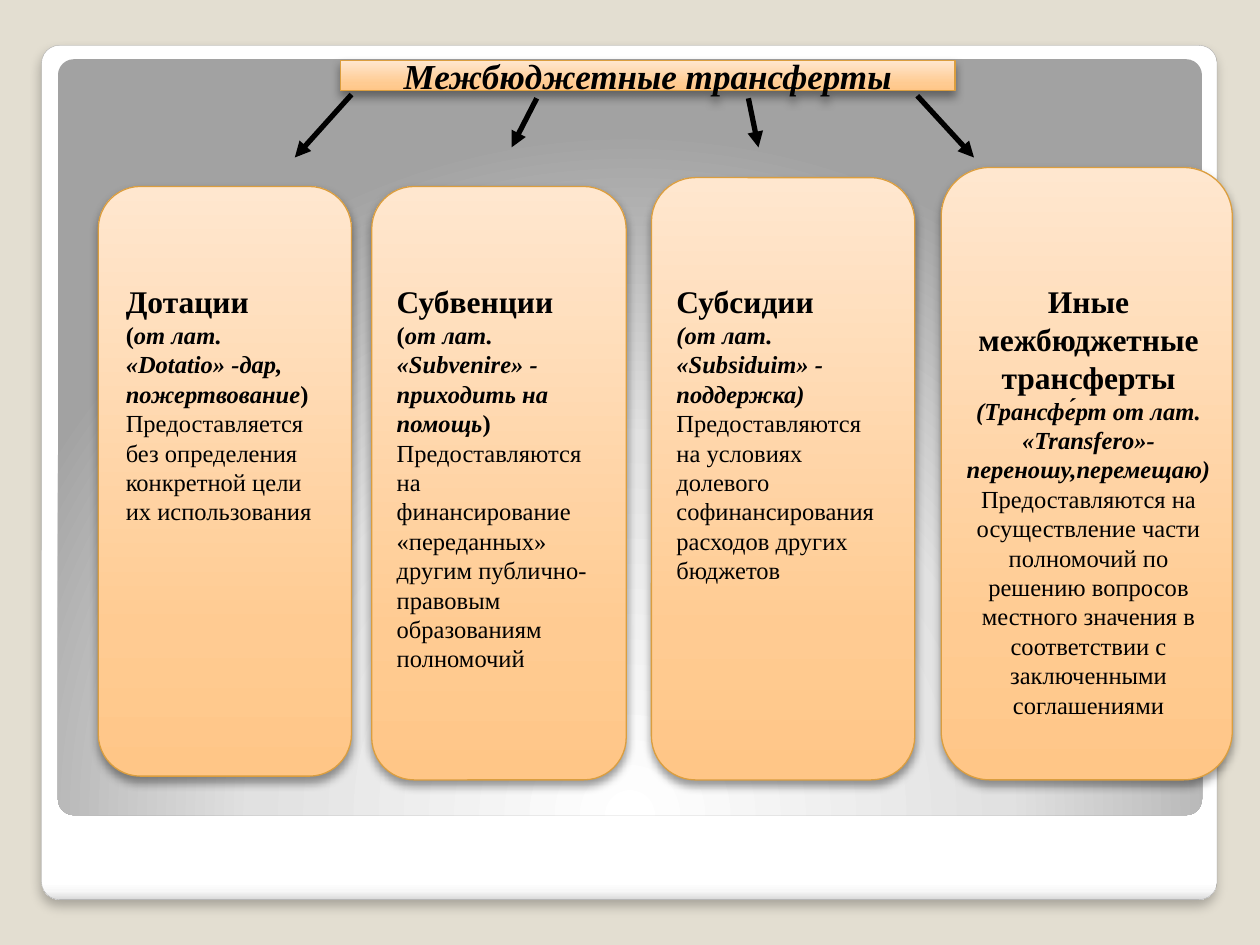
from pptx import Presentation
from pptx.dml.color import RGBColor
from pptx.enum.shapes import MSO_CONNECTOR, MSO_SHAPE
from pptx.enum.text import MSO_ANCHOR, MSO_AUTO_SIZE, PP_ALIGN
from pptx.oxml import parse_xml
from pptx.oxml.ns import nsdecls
from pptx.util import Inches, Pt
from lxml.etree import SubElement

BLACK = RGBColor(0x00, 0x00, 0x00)
BEIGE = RGBColor(0xE3, 0xDE, 0xD1)
GOLD = RGBColor(0xDB, 0x9E, 0x3F)
GREY = RGBColor(0xA4, 0xA4, 0xA4)
PALE = RGBColor(0xE1, 0xE1, 0xE1)
DARK = RGBColor(0xA2, 0xA2, 0xA2)
WHITE = RGBColor(0xFF, 0xFF, 0xFF)
MIST = RGBColor(0xF7, 0xF7, 0xF7)
SILVER = RGBColor(0xDA, 0xDA, 0xDA)
PEACH = RGBColor(0xFF, 0xC6, 0x87)
APRICOT = RGBColor(0xFF, 0xCB, 0x92)
CREAM = RGBColor(0xFF, 0xE7, 0xCF)

FRAME = [(0, WHITE), (98, WHITE), (99, MIST), (100, SILVER)]
PANEL = [(0, WHITE), (55, PALE), (100, DARK)]
ORANGE = [(0, PEACH), (25, APRICOT), (100, CREAM)]

FONT = "Times New Roman"
HEAD = (18, True, False)
BOLD = (14, True, False)
LATIN = (14, True, True)
BODY = (14, False, False)

# Card box, text box, alignment, paragraphs made of (text, style) runs
CARDS = [
    ((0.78, 1.48, 2.01, 4.68), (0.9, 2.19, 1.73, 2.05), PP_ALIGN.LEFT, [
        [("Дотации", HEAD)],
        [("(", BOLD), ("от лат. «Dotatio» -дар, пожертвование", LATIN), (")", BOLD)],
        [("Предоставляется без определения конкретной цели их использования", BODY)],
    ]),
    ((2.95, 1.48, 2.02, 4.71), (3.05, 2.19, 1.81, 3.23), PP_ALIGN.LEFT, [
        [("Субвенции", HEAD)],
        [("(", BOLD), ("от лат. «Subvenire» - приходить на помощь", LATIN), (")", BOLD)],
        [("Предоставляются на финансирование «переданных» другим "
          "публично-правовым образованиям полномочий", BODY)],
    ]),
    ((5.17, 1.41, 2.09, 4.78), (5.27, 2.19, 1.89, 2.52), PP_ALIGN.LEFT, [
        [("Субсидии", HEAD)],
        [("(от лат. «Subsiduim» - поддержка)", LATIN)],
        [("Предоставляются на условиях долевого софинансирования "
          "расходов других бюджетов", BODY)],
    ]),
    ((7.47, 1.33, 2.31, 4.86), (7.56, 2.19, 2.16, 3.6), PP_ALIGN.CENTER, [
        [("Иные межбюджетные трансферты ", HEAD),
         ("(Трансфе́рт от лат. «Transfero»-переношу,перемещаю) ", LATIN),
         ("Предоставляются на осуществление части полномочий по решению "
          "вопросов местного значения в соответствии с заключенными "
          "соглашениями", BODY)],
    ]),
]
ARROWS = [
    (2.79, 0.75, 2.34, 1.25),
    (4.26, 0.78, 4.06, 1.17),
    (5.94, 0.78, 6.02, 1.17),
    (7.28, 0.76, 7.73, 1.25),
]


def shade(shape, stops, way):
    """Fill with a gradient; way is the XML giving its direction."""
    marks = "".join(
        f'<a:gs pos="{pos * 1000}"><a:srgbClr val="{color}"/></a:gs>'
        for pos, color in stops)
    shape.fill.gradient()
    props = shape.element.spPr
    props.replace(props.find("{*}gradFill"), parse_xml(
        f'<a:gradFill {nsdecls("a")} rotWithShape="1">'
        f"<a:gsLst>{marks}</a:gsLst>{way}</a:gradFill>"))


def linear(angle):
    return f'<a:lin ang="{angle * 60000}" scaled="0"/>'


def drop(shape, alpha, blur, dist):
    """Cast a black shadow straight down."""
    shape.element.spPr.find("{*}effectLst").append(parse_xml(
        f'<a:outerShdw {nsdecls("a")} blurRad="{Pt(blur)}" dist="{Pt(dist)}" '
        f'dir="5400000" rotWithShape="0"><a:srgbClr val="000000">'
        f'<a:alpha val="{alpha * 1000}"/></a:srgbClr></a:outerShdw>'))


def block(slide, kind, box, stops, way, edge=None, width=0.75):
    shape = slide.shapes.add_shape(kind, *map(Inches, box))
    shape.shadow.inherit = False
    shade(shape, stops, way)
    if edge is None:
        shape.line.fill.background()
    else:
        shape.line.color.rgb = edge
        shape.line.width = Pt(width)
    return shape


def tile(slide, kind, box):
    shape = block(slide, kind, box, ORANGE, linear(270), GOLD)
    drop(shape, 40, 5.2, 3)
    return shape


def write(para, text, style):
    run = para.add_run()
    run.text = text
    font = run.font
    font.name = FONT
    font.color.rgb = BLACK
    size, font.bold, font.italic = style
    font.size = Pt(size)


def backdrop(slide, box):
    """Draw the white frame and the grey panel at its top."""
    left, top, width, height = box
    kind = MSO_SHAPE.ROUNDED_RECTANGLE
    frame = block(slide, kind, box, FRAME, linear(90), GREY, 0.16)
    drop(frame, 25, 6, 4)
    inner = (left + 0.13, top + 0.11, width - 0.25, height - 0.78)
    glow = ('<a:path path="circle"><a:fillToRect l="50000" t="175000" '
            'r="50000" b="-75000"/></a:path>')
    panel = block(slide, kind, inner, PANEL, glow)
    for shape in (frame, panel):
        shape.adjustments[0] = 0.021


def title(slide, box):
    frame = tile(slide, MSO_SHAPE.RECTANGLE, box).text_frame
    frame.word_wrap = False
    frame.vertical_anchor = MSO_ANCHOR.MIDDLE
    para = frame.paragraphs[0]
    para.alignment = PP_ALIGN.CENTER
    write(para, "Межбюджетные трансферты", (20, True, True))


def card(slide, box, area, align, paras):
    tile(slide, MSO_SHAPE.FLOWCHART_ALTERNATE_PROCESS, box)
    frame = slide.shapes.add_textbox(*map(Inches, area)).text_frame
    frame.word_wrap = True
    frame.auto_size = MSO_AUTO_SIZE.SHAPE_TO_FIT_TEXT
    for i, runs in enumerate(paras):
        para = frame.add_paragraph() if i else frame.paragraphs[0]
        para.alignment = align
        for text, style in runs:
            write(para, text, style)


def arrow(slide, ends):
    link = slide.shapes.add_connector(MSO_CONNECTOR.STRAIGHT, *map(Inches, ends))
    link.line.color.rgb = BLACK
    link.line.width = Pt(3)
    line = link.line._get_or_add_ln()
    line.append(parse_xml(f'<a:tailEnd {nsdecls("a")} type="triangle"/>'))
    space = "{http://schemas.openxmlformats.org/drawingml/2006/main}"
    SubElement(link.element.spPr, space + "effectLst")


def main():
    deck = Presentation()
    deck.slide_width, deck.slide_height = Inches(10), Inches(7.5)
    slide = deck.slides.add_slide(deck.slide_layouts[6])
    slide.background.fill.solid()
    slide.background.fill.fore_color.rgb = BEIGE
    backdrop(slide, (0.33, 0.36, 9.33, 6.78))
    title(slide, (2.7, 0.48, 4.88, 0.24))
    for item in CARDS:
        card(slide, *item)
    for ends in ARROWS:
        arrow(slide, ends)
    deck.save("out.pptx")


if __name__ == "__main__":
    main()
